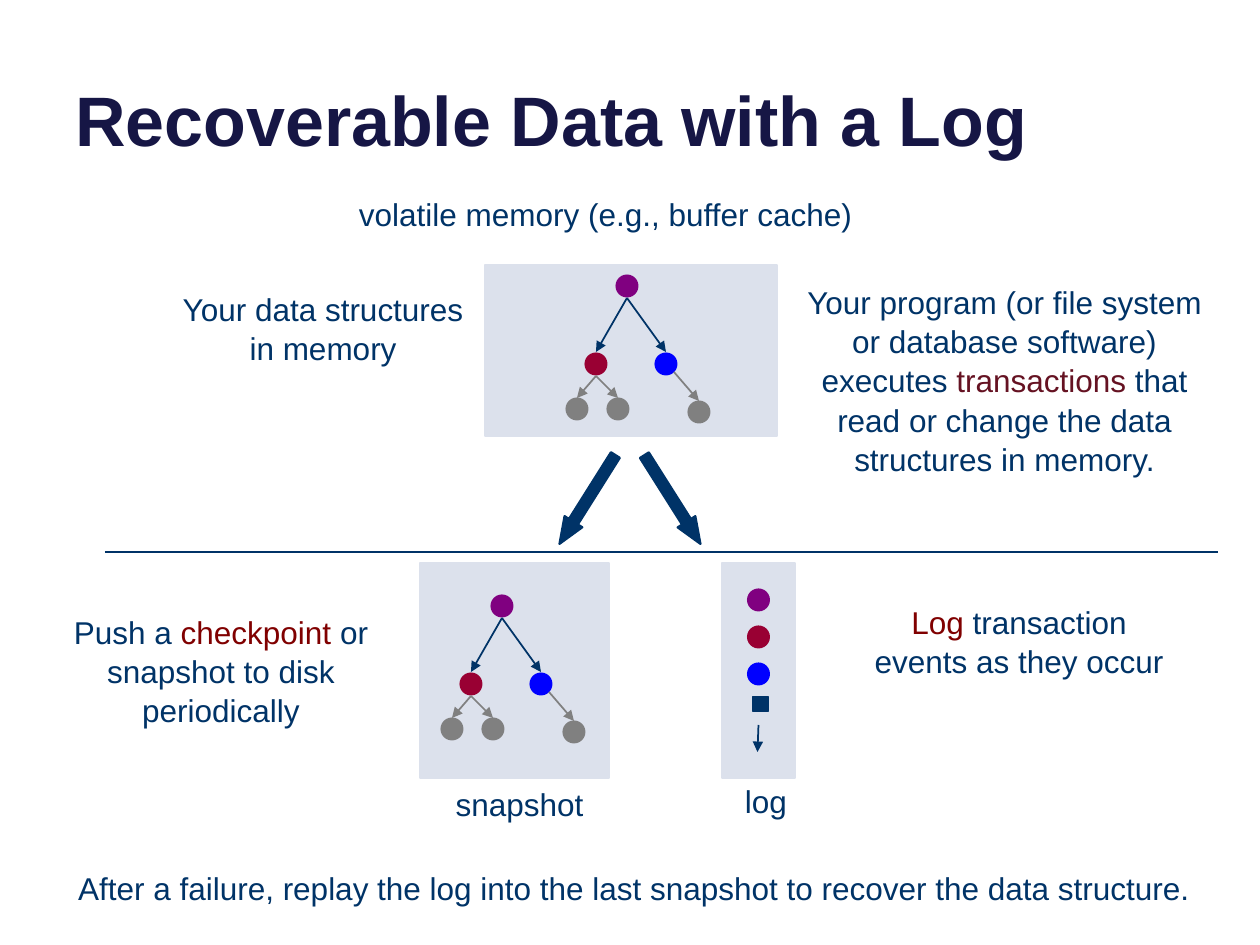
from lxml import etree
from pptx import Presentation
from pptx.dml.color import RGBColor
from pptx.enum.shapes import MSO_CONNECTOR as Connector, MSO_SHAPE as Shape
from pptx.enum.text import MSO_ANCHOR as Anchor, PP_ALIGN as Align
from pptx.oxml.ns import qn
from pptx.util import Pt

PX = 914400 / 126
NAVY = RGBColor(0x00, 0x33, 0x67)
TITLE_INK = RGBColor(0x16, 0x16, 0x45)
PANEL = RGBColor(0xDC, 0xE1, 0xEC)
PURPLE = RGBColor(0x80, 0x00, 0x80)
CRIMSON = RGBColor(0x99, 0x00, 0x33)
BLUE = RGBColor(0x00, 0x00, 0xFF)
GRAY = RGBColor(0x80, 0x80, 0x80)
WINE = RGBColor(0x65, 0x12, 0x22)
MAROON = RGBColor(0x80, 0x00, 0x00)
NODE = 23

# Offsets from the centre of the root node
TREE_NODES = [(0, 0, PURPLE), (39, 78, BLUE), (-31, 78, CRIMSON),
              (-9, 123, GRAY), (-50, 123, GRAY), (72, 126, GRAY)]
TREE_EDGES = [((0, 12), (39, 66), NAVY), ((0, 12), (-31, 66), NAVY),
              ((-31, 90), (-9, 112), GRAY), ((-31, 90), (-50, 112), GRAY),
              ((47, 86), (72, 115), GRAY)]


def emu(*lengths):
    return [round(length * PX) for length in lengths]


def add_solid(page, kind, box, color, line_width=None):
    shape = page.shapes.add_shape(kind, *emu(*box))
    shape.shadow.inherit = False
    shape.fill.solid()
    shape.fill.fore_color.rgb = color
    if line_width:
        shape.line.color.rgb = color
        shape.line.width = Pt(line_width)
    else:
        shape.line.fill.background()
    return shape


def add_node(page, x, y, color):
    """Draw a round node centred on (x, y)."""
    add_solid(page, Shape.OVAL, (x - NODE / 2, y - NODE / 2, NODE, NODE), color)


def add_line(page, start, end, color, width=1, arrow=True):
    line = page.shapes.add_connector(Connector.STRAIGHT, *emu(*start, *end))
    line.line.color.rgb = color
    line.line.width = Pt(width)
    if arrow:
        etree.SubElement(line.line._get_or_add_ln(), qn("a:tailEnd"), type="triangle")
    etree.SubElement(line._element.spPr, qn("a:effectLst"))


def add_text(page, box, *spans, size=18, color=NAVY, bold=False,
             align=Align.CENTER, anchor=Anchor.MIDDLE, wrap=False):
    """Write one paragraph; a span is a string or a (string, colour) pair."""
    frame = page.shapes.add_textbox(*emu(*box)).text_frame
    frame.word_wrap = wrap
    frame.vertical_anchor = anchor
    para = frame.paragraphs[0]
    para.alignment = align
    para.font.name = "Arial"
    para.font.size = Pt(size)
    para.font.bold = bold
    para.font.color.rgb = color
    for item in spans:
        words, ink = (item, None) if isinstance(item, str) else item
        span = para.add_run()
        span.text = words
        if ink is not None:
            span.font.color.rgb = ink
    return para


def add_note(page, box, *spans):
    para = add_text(page, box, *spans, anchor=Anchor.TOP, wrap=True)
    para.line_spacing = 1.04


def add_tree_panel(page, box, root_x, root_y):
    """Draw a panel holding the data tree, its root placed inside the box."""
    add_solid(page, Shape.RECTANGLE, box, PANEL, 1)
    x, y = box[0] + root_x, box[1] + root_y
    for dx, dy, color in TREE_NODES:
        add_node(page, x + dx, y + dy, color)
    for (x1, y1), (x2, y2), color in TREE_EDGES:
        add_line(page, (x + x1, y + y1), (x + x2, y + y2), color)


def add_log_panel(page, box):
    left, top, width, height = box
    add_solid(page, Shape.RECTANGLE, box, PANEL, 1)
    middle = left + width / 2
    for row, color in enumerate((PURPLE, CRIMSON, BLUE)):
        add_node(page, middle, top + 37 + 37 * row, color)
    add_solid(page, Shape.RECTANGLE, (middle - 6, top + 134, 16, 14), NAVY, 1)
    add_line(page, (middle, top + 162), (middle - 1, top + 189), NAVY)
    add_text(page, (left + 3, top + 206, 82, 64), "log")


def add_push_arrows(page, box):
    """Draw two block arrows spreading downwards from the top of the box."""
    left, top, width, height = box
    for x, angle in ((left, 32.2), (left + width - 21, 327.7)):
        arrow = add_solid(page, Shape.DOWN_ARROW, (x, top, 21, height), NAVY, 1.25)
        arrow.adjustments[0] = 0.5
        arrow.adjustments[1] = 1.25
        arrow.rotation = angle


def add_memory_region(page, box):
    left, top, width, height = box
    add_text(page, (left + 188, top, 525, 50), "volatile memory (e.g., buffer cache)")
    add_tree_panel(page, (left + 330, top + 76, 292, 171), 142, 21)
    add_note(page, (left + 625, top + 86, 449, 204),
             "Your program (or file system or database software) executes ",
             ("transactions ", WINE),
             "that read or change the data structures in memory.")
    add_note(page, (left, top + 93, 336, 89), "Your data structures in memory")


def add_disk_region(page, box):
    left, top, width, height = box
    add_tree_panel(page, (left + 367, top, 189, 215), 82, 43)
    add_text(page, (left + 367, top + 209, 199, 64), "snapshot")
    add_log_panel(page, (left + 669, top, 73, 215))
    add_note(page, (left, top + 42, 336, 127),
             "Push a ", ("checkpoint", MAROON), " or snapshot to disk periodically")
    add_note(page, (left + 798, top + 32, 336, 89),
             ("Log", MAROON), " transaction events as they occur")


def main():
    deck = Presentation()
    deck.slide_width, deck.slide_height = emu(1260, 945)
    page = deck.slides.add_slide(deck.slide_layouts[6])
    add_text(page, (63, -47, 1134, 214), "Recoverable Data with a Log", size=40,
             color=TITLE_INK, bold=True, align=Align.LEFT, anchor=Anchor.BOTTOM, wrap=True)
    add_memory_region(page, (155, 189, 1074, 290))
    add_push_arrows(page, (577, 447, 106, 105))
    add_line(page, (105, 552), (1218, 552), NAVY, 0.75, arrow=False)
    add_disk_region(page, (53, 563, 1134, 273))
    add_text(page, (63, 863, 1142, 50),
             "After a failure, replay the log into the last snapshot to recover the data structure.")
    deck.save("out.pptx")


if __name__ == "__main__":
    main()
